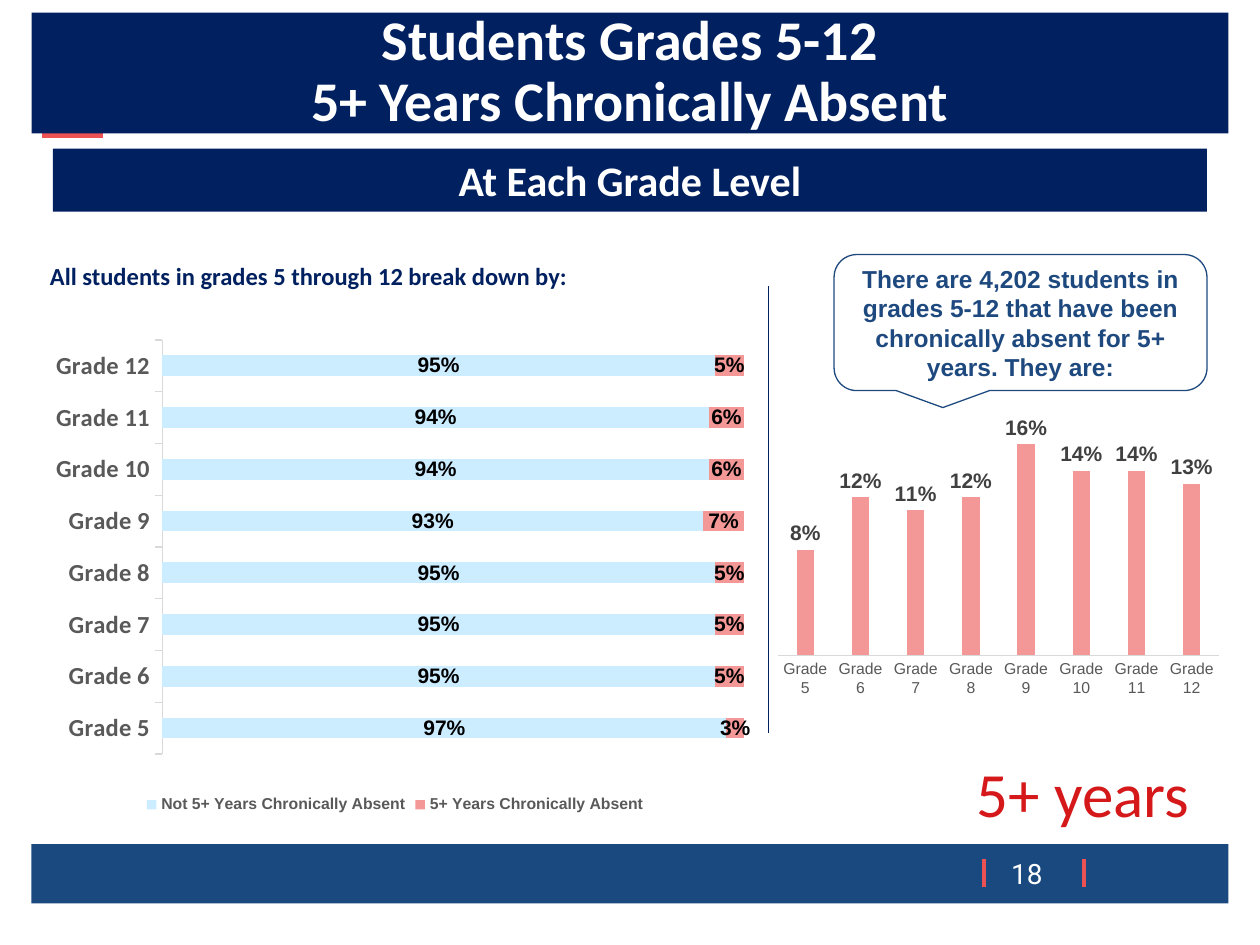
from lxml import etree
from pptx import Presentation
from pptx.chart.data import CategoryChartData
from pptx.dml.color import RGBColor
from pptx.enum.chart import XL_CHART_TYPE, XL_LABEL_POSITION, XL_LEGEND_POSITION, XL_TICK_MARK
from pptx.enum.shapes import MSO_CONNECTOR, MSO_SHAPE
from pptx.enum.text import MSO_ANCHOR, MSO_AUTO_SIZE, PP_ALIGN
from pptx.oxml import parse_xml
from pptx.oxml.ns import nsdecls, qn
from pptx.util import Inches, Pt

NAVY = RGBColor(0x00, 0x20, 0x60)
BLUE = RGBColor(0x1A, 0x49, 0x7F)
CALLOUT_BLUE = RGBColor(0x1E, 0x49, 0x7F)
CORAL = RGBColor(0xEC, 0x51, 0x53)
PINK = RGBColor(0xF3, 0x97, 0x97)
PALE_BLUE = RGBColor(0xCC, 0xEC, 0xFF)
RED = RGBColor(0xD5, 0x18, 0x1A)
WHITE = RGBColor(0xFF, 0xFF, 0xFF)
BLACK = RGBColor(0x00, 0x00, 0x00)
DARK_GRAY = RGBColor(0x40, 0x40, 0x40)
GRAY = RGBColor(0x59, 0x59, 0x59)
LIGHT_GRAY = RGBColor(0xD9, 0xD9, 0xD9)

CENTER = PP_ALIGN.CENTER
MIDDLE, TOP = MSO_ANCHOR.MIDDLE, MSO_ANCHOR.TOP
NO_AUTOFIT = MSO_AUTO_SIZE.NONE
RECTANGLE = MSO_SHAPE.RECTANGLE
CALLOUT = MSO_SHAPE.ROUNDED_RECTANGULAR_CALLOUT
STRAIGHT = MSO_CONNECTOR.STRAIGHT
BAR_STACKED, COLUMN = XL_CHART_TYPE.BAR_STACKED, XL_CHART_TYPE.COLUMN_CLUSTERED
LABEL_CENTER, LABEL_OUTSIDE = XL_LABEL_POSITION.CENTER, XL_LABEL_POSITION.OUTSIDE_END
LEGEND_BOTTOM = XL_LEGEND_POSITION.BOTTOM
TICK_OUT, TICK_NONE = XL_TICK_MARK.OUTSIDE, XL_TICK_MARK.NONE

GRADES = [f"Grade {grade}" for grade in range(5, 13)]
SHARE_ABSENT = [0.03, 0.05, 0.05, 0.05, 0.07, 0.06, 0.06, 0.05]
SHARE_NOT_ABSENT = [0.97, 0.95, 0.95, 0.95, 0.93, 0.94, 0.94, 0.95]
ABSENT_BY_GRADE = [0.08, 0.12, 0.11, 0.12, 0.16, 0.14, 0.14, 0.13]


def inches(*lengths):
    return [Inches(length) for length in lengths]


def style_font(font, size, color, name="Calibri", bold=True):
    for key, value in {"size": Pt(size), "name": name, "bold": bold}.items():
        setattr(font, key, value)
    font.color.rgb = color


def write(shape, lines, size, color, name="Calibri", bold=True, anchor=MIDDLE, spacing=1.0):
    frame = shape.text_frame
    frame.text = "\n".join(lines)
    layout = {"word_wrap": True, "auto_size": NO_AUTOFIT, "vertical_anchor": anchor}
    for key, value in layout.items():
        setattr(frame, key, value)
    for paragraph in frame.paragraphs:
        paragraph.alignment = CENTER
        paragraph.line_spacing = spacing
        style_font(paragraph.runs[0].font, size, color, name, bold)


def add_label(slide, box, text, size, color, **formats):
    label = slide.shapes.add_textbox(*inches(*box))
    write(label, [text], size, color, **formats)
    return label


def add_banner(slide, box, fill):
    banner = slide.shapes.add_shape(RECTANGLE, *inches(*box))
    banner.shadow.inherit = False
    banner.fill.solid()
    banner.fill.fore_color.rgb = fill
    banner.line.fill.background()
    return banner


def add_rule(slide, ends, color, width):
    rule = slide.shapes.add_connector(STRAIGHT, *inches(*ends))
    rule.line.color.rgb = color
    rule.line.width = Pt(width)
    etree.SubElement(rule._element.spPr, qn("a:effectLst"))


def add_header(slide, box):
    left, top, width, height = box
    add_rule(slide, (left + 0.08, top + 0.95, left + 0.57, top + 0.95), CORAL, 6)
    title = slide.shapes.title
    slide.shapes._spTree.append(title._element)
    title.left, title.top, title.width, title.height = inches(*box)
    title.fill.solid()
    title.fill.fore_color.rgb = NAVY
    write(title, ["Students Grades 5-12", "5+ Years Chronically Absent"], 32, WHITE, spacing=0.9)
    subtitle = add_banner(slide, (left + 0.17, top + 1.08, width - 0.34, 0.5), NAVY)
    write(subtitle, ["At Each Grade Level"], 24, WHITE)


def add_footer(slide, box):
    left, top, width, height = box
    add_banner(slide, box, BLUE)
    for offset in (7.56, 8.35):
        add_rule(slide, (left + offset, top + 0.12, left + offset, top + 0.34), CORAL, 2.25)
    add_label(slide, (left + 7.6, top + 0.05, 0.6, 0.37), "18", 16, WHITE,
              name="Roboto", bold=False)


def add_grade_chart(slide, box, kind, series, gap, overlap, label_position, label_color):
    data = CategoryChartData(number_format="0%")
    data.categories = GRADES
    for name, values, color in series:
        data.add_series(name, values)
    chart = slide.shapes.add_chart(kind, *inches(*box), data).chart
    style_font(chart.font, 10, BLACK, "Arial", False)
    chart.has_title = False
    chart.has_legend = False
    plot = chart.plots[0]
    for key, value in {"gap_width": gap, "overlap": overlap, "vary_by_categories": False}.items():
        setattr(plot, key, value)
    for bars, (name, values, color) in zip(plot.series, series):
        bars.format.fill.solid()
        bars.format.fill.fore_color.rgb = color
        labels = bars.data_labels
        label_formats = {"show_value": True, "position": label_position,
                         "number_format": "0%", "number_format_is_linked": False}
        for key, value in label_formats.items():
            setattr(labels, key, value)
        style_font(labels.font, 12, label_color, "Arial")
    chart.value_axis.visible = False
    chart.value_axis.has_major_gridlines = False
    chart.value_axis.minimum_scale = 0
    chart.category_axis.format.line.color.rgb = LIGHT_GRAY
    chart.category_axis.format.line.width = Pt(0.75)
    return chart


def set_plot_area(chart, x, y, w, h):
    plot_area = chart._chartSpace.chart.plotArea
    for old_layout in plot_area.findall(qn("c:layout")):
        plot_area.remove(old_layout)
    modes = "".join(f'<c:{side}Mode val="edge"/>' for side in "xy")
    sizes = "".join(f'<c:{side} val="{value}"/>' for side, value in zip("xywh", (x, y, w, h)))
    plot_area.insert(0, parse_xml(
        f'<c:layout {nsdecls("c")}><c:manualLayout><c:layoutTarget val="inner"/>'
        f'{modes}{sizes}</c:manualLayout></c:layout>'))


def add_breakdown(slide, box):
    left, top, width, height = box
    add_label(slide, (left - 0.3, top, 5, 0.34),
              "All students in grades 5 through 12 break down by:", 14, NAVY, anchor=TOP)
    series = [("Not 5+ Years Chronically Absent", SHARE_NOT_ABSENT, PALE_BLUE),
              ("5+ Years Chronically Absent", SHARE_ABSENT, PINK)]
    chart = add_grade_chart(slide, (left, top + 0.52, width, height - 0.52), BAR_STACKED,
                            series, 150, 100, LABEL_CENTER, BLACK)
    set_plot_area(chart, 0.18, 0.04, 0.8, 0.83)
    chart.value_axis.maximum_scale = 1
    chart.category_axis.major_tick_mark = TICK_OUT
    style_font(chart.category_axis.tick_labels.font, 14, GRAY)
    chart.has_legend = True
    chart.legend.position = LEGEND_BOTTOM
    chart.legend.include_in_layout = False
    style_font(chart.legend.font, 9, GRAY, "Arial")


def add_absent_students(slide, box):
    left, top, width, height = box
    chart = add_grade_chart(slide, (left, top + 1.25, width, 2.31), COLUMN,
                            [("5+ years", ABSENT_BY_GRADE, PINK)], 219, -27,
                            LABEL_OUTSIDE, DARK_GRAY)
    chart.category_axis.major_tick_mark = TICK_NONE
    style_font(chart.category_axis.tick_labels.font, 9, GRAY, "Arial", False)
    callout = slide.shapes.add_shape(CALLOUT, *inches(left + 0.52, top, 2.96, 1.08))
    callout.shadow.inherit = False
    callout.fill.background()
    callout.line.color.rgb = CALLOUT_BLUE
    callout.line.width = Pt(0.75)
    write(callout, ["There are 4,202 students in grades 5-12 that have been "
                    "chronically absent for 5+ years. They are:"], 14, CALLOUT_BLUE, "Arial")
    add_rule(slide, (left, top + 0.25, left, top + 3.8), NAVY, 0.75)
    years = add_label(slide, (left + 1.52, top + height - 0.71, 1.95, 0.71), "5+ years",
                      36, RED, bold=False, anchor=TOP)
    outline = parse_xml(f'<a:ln {nsdecls("a")} w="{Pt(0.75)}"><a:solidFill>'
                        f'<a:srgbClr val="{NAVY}"/></a:solidFill></a:ln>')
    years.text_frame.paragraphs[0].runs[0]._r.get_or_add_rPr().insert(0, outline)


def main():
    presentation = Presentation()
    presentation.slide_width, presentation.slide_height = inches(10, 7.5)
    slide = presentation.slides.add_slide(presentation.slide_layouts[5])
    add_footer(slide, (0.25, 6.7, 9.5, 0.47))
    add_header(slide, (0.25, 0.1, 9.5, 0.96))
    add_breakdown(slide, (0.25, 2.02, 5.77, 4.48))
    add_absent_students(slide, (6.1, 2.02, 3.65, 4.63))
    presentation.save("out.pptx")


if __name__ == "__main__":
    main()
